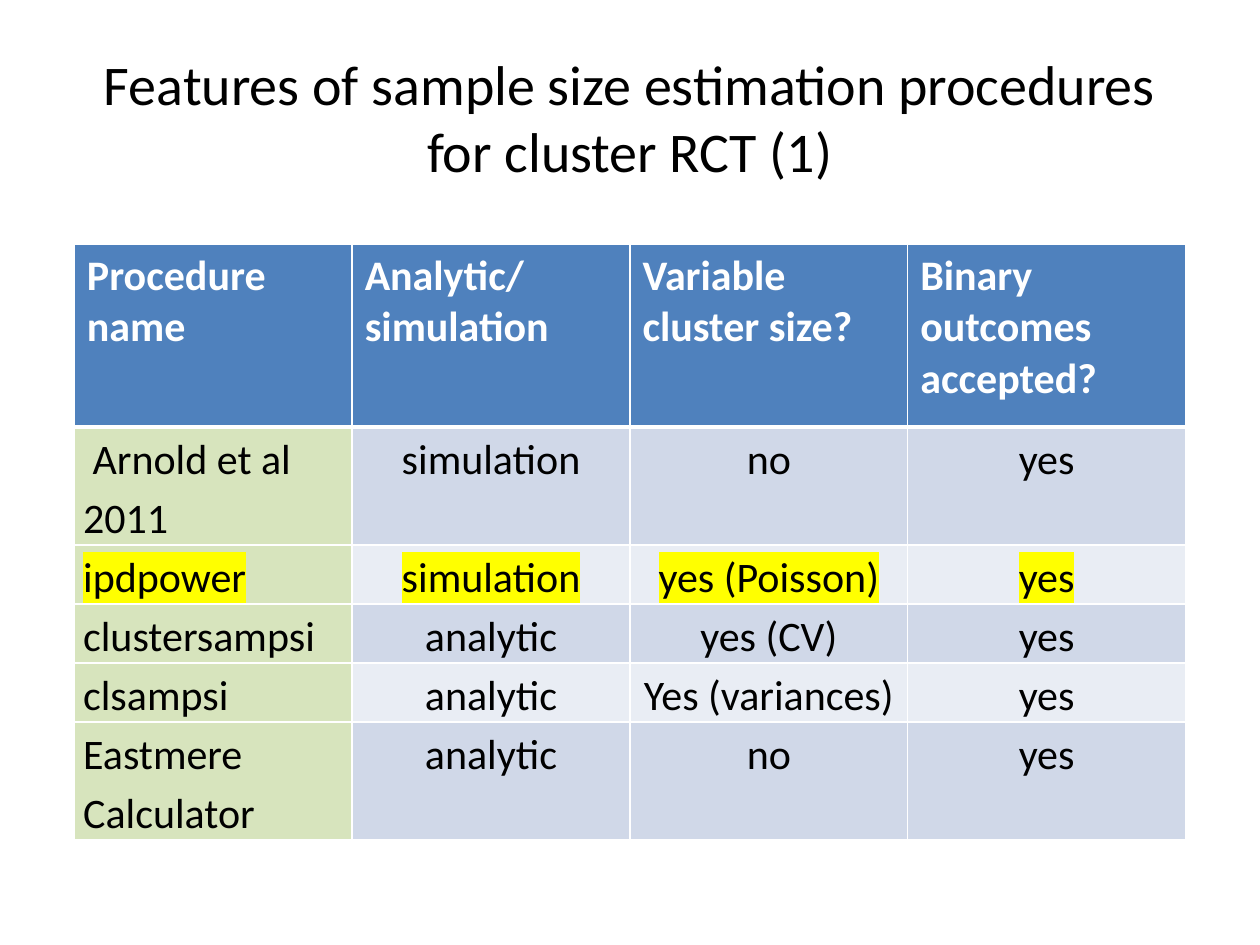
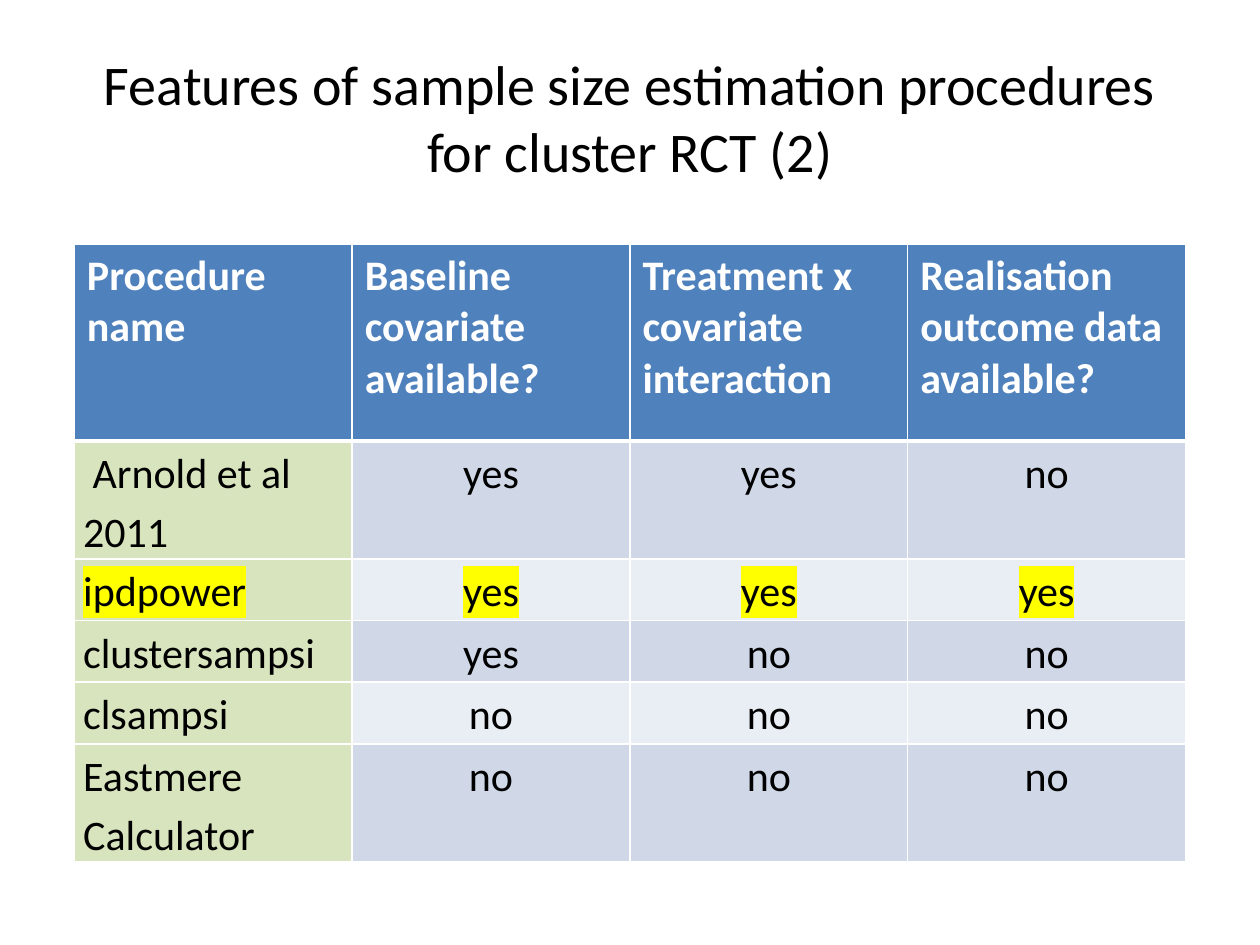
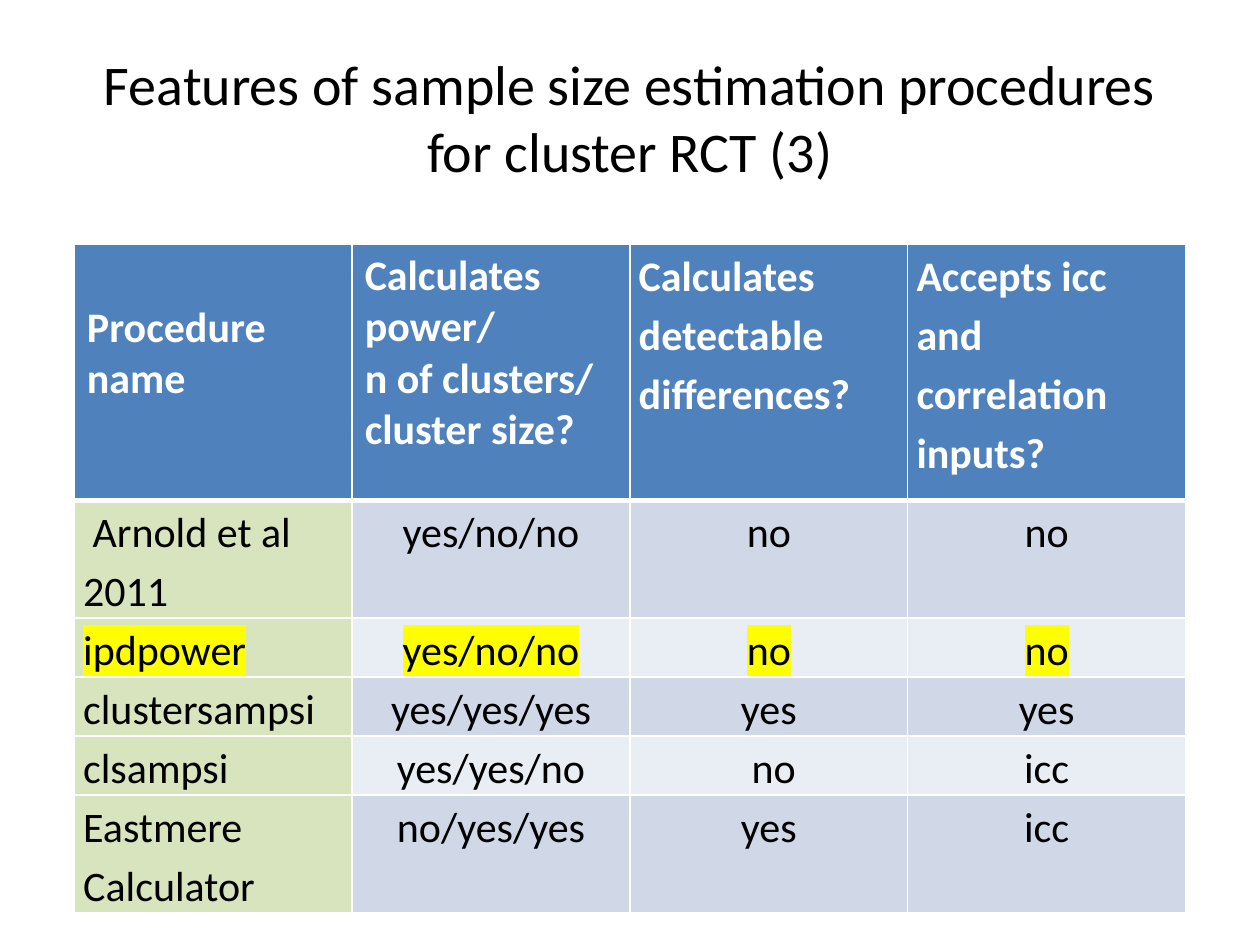
from dataclasses import dataclass

from lxml.etree import SubElement
from pptx import Presentation
from pptx.dml.color import RGBColor as Rgb
from pptx.enum.text import MSO_ANCHOR as Anchor, PP_ALIGN as Align
from pptx.oxml import parse_xml
from pptx.oxml.ns import nsdecls, qn
from pptx.util import Inches, Pt


@dataclass(frozen=True)
class Theme:
    font: str = "Calibri"
    title_size: int = 32
    table_size: int = 24
    text: str = "000000"
    header_text: str = "FFFFFF"
    header_fill: str = "4F81BD"
    name_fill: str = "D7E4BD"
    bands: tuple = ("D0D8E8", "E9EDF4")
    highlight: str = "FFFF00"
    border: str = "FFFFFF"
    thin: int = 1
    thick: int = 3


THEME = Theme()
TITLE = "Features of sample size estimation procedures for cluster RCT ({})"
PROCEDURES = [" Arnold et al 2011", "ipdpower", "clustersampsi", "clsampsi",
              "Eastmere Calculator"]
HIGHLIGHTED = "ipdpower"
COLUMN_WIDTH = 2.205
NORMAL_INSETS = (0.1, 0.05)
TIGHT_INSETS = (0.07, 0)
BODY_SPACING = 1.15
HEADER_LINE = 0.41


@dataclass(frozen=True)
class Comparison:
    """Feature questions, with one row of answers per procedure."""
    questions: tuple
    answers: tuple
    header_height: float
    row_height: float
    last_height: float
    tight_headers: tuple = ()
    name_drop: float = 0


COMPARISONS = [
    Comparison(
        ("Analytic/\nsimulation", "Variable cluster size?", "Binary outcomes accepted?"),
        (("simulation", "no", "yes"),
         ("simulation", "yes (Poisson)", "yes"),
         ("analytic", "yes (CV)", "yes"),
         ("analytic", "Yes (variances)", "yes"),
         ("analytic", "no", "yes")),
        header_height=1.45, row_height=0.45, last_height=0.83),
    Comparison(
        ("Baseline covariate available?", "Treatment x covariate interaction",
         "Realisation outcome data available?"),
        (("yes", "yes", "no"),
         ("yes", "yes", "yes"),
         ("yes", "no", "no"),
         ("no", "no", "no"),
         ("no", "no", "no")),
        header_height=1.56, row_height=0.49, last_height=0.9),
    Comparison(
        ("Calculates power/\nn of clusters/\ncluster size?",
         "Calculates detectable differences?", "Accepts icc and correlation inputs?"),
        (("yes/no/no", "no", "no"),
         ("yes/no/no", "no", "no"),
         ("yes/yes/yes", "yes", "yes"),
         ("yes/yes/no", " no", "icc"),
         ("no/yes/yes", "yes", "icc")),
        header_height=2.03, row_height=0.45, last_height=0.82,
        tight_headers=(2, 3), name_drop=HEADER_LINE),
]


def write_text(frame, text, size=THEME.table_size, color=THEME.text, bold=False,
               align=Align.LEFT, spacing=None, highlight=None):
    """Fill a text frame, one paragraph for each line of text."""
    for index, line in enumerate(text.split("\n")):
        paragraph = frame.add_paragraph() if index else frame.paragraphs[0]
        paragraph.alignment = align
        if spacing:
            paragraph.line_spacing = spacing
        run = paragraph.add_run()
        run.text = line
        font = run.font
        font.size, font.bold, font.name = Pt(size), bold, THEME.font
        font.color.rgb = Rgb.from_string(color)
        if highlight:
            mark = parse_xml(f'<a:highlight {nsdecls("a")}>'
                             f'<a:srgbClr val="{highlight}"/></a:highlight>')
            run._r.rPr.find(qn("a:solidFill")).addnext(mark)


def set_borders(cell, top, bottom):
    """Draw the four cell borders; they must precede the fill in the XML."""
    widths = {"a:lnL": THEME.thin, "a:lnR": THEME.thin, "a:lnT": top, "a:lnB": bottom}
    properties = cell._tc.get_or_add_tcPr()
    for position, (side, width) in enumerate(widths.items()):
        border = SubElement(properties, qn(side), w=str(Pt(width)))
        fill = SubElement(border, qn("a:solidFill"))
        SubElement(fill, qn("a:srgbClr"), val=THEME.border)
        properties.insert(position, border)


def format_cell(cell, fill, insets, top=THEME.thin, bottom=THEME.thin, drop=0):
    cell.fill.solid()
    cell.fill.fore_color.rgb = Rgb.from_string(fill)
    side, edge = insets
    cell.margin_left = cell.margin_right = Inches(side)
    cell.margin_top, cell.margin_bottom = Inches(edge + drop), Inches(edge)
    set_borders(cell, top, bottom)


def add_title(slide, text):
    title = slide.shapes.title
    title.left, title.top = Inches(0.5), Inches(0.3)
    title.width, title.height = Inches(9), Inches(1.25)
    title.text_frame.vertical_anchor = Anchor.MIDDLE
    write_text(title.text_frame, text, size=THEME.title_size, align=Align.CENTER)


def fill_header(table, comparison):
    for column, label in enumerate(("Procedure name", *comparison.questions)):
        tight = column in comparison.tight_headers
        cell = table.cell(0, column)
        format_cell(cell, THEME.header_fill, TIGHT_INSETS if tight else NORMAL_INSETS,
                    bottom=THEME.thick, drop=0 if column else comparison.name_drop)
        write_text(cell.text_frame, label, color=THEME.header_text, bold=True,
                   spacing=BODY_SPACING if tight else None)


def fill_procedure(table, row, name, answers):
    band = THEME.bands[(row - 1) % 2]
    for column, label in enumerate((name, *answers)):
        cell = table.cell(row, column)
        format_cell(cell, band if column else THEME.name_fill, TIGHT_INSETS,
                    top=THEME.thick if row == 1 else THEME.thin)
        write_text(cell.text_frame, label, spacing=BODY_SPACING,
                   align=Align.CENTER if column else Align.LEFT,
                   highlight=THEME.highlight if name == HIGHLIGHTED else None)


def add_comparison(slide, comparison):
    heights = [comparison.header_height,
               *[comparison.row_height] * (len(PROCEDURES) - 1),
               comparison.last_height]
    columns = len(comparison.questions) + 1
    table = slide.shapes.add_table(
        len(heights), columns, Inches(0.59), Inches(1.94),
        Inches(columns * COLUMN_WIDTH), Inches(sum(heights))).table
    for column in table.columns:
        column.width = Inches(COLUMN_WIDTH)
    for row, height in zip(table.rows, heights):
        row.height = Inches(height)
    fill_header(table, comparison)
    for row, (name, answers) in enumerate(zip(PROCEDURES, comparison.answers), 1):
        fill_procedure(table, row, name, answers)


def main():
    deck = Presentation()
    deck.slide_width, deck.slide_height = Inches(10), Inches(7.5)
    title_only = deck.slide_layouts[5]
    for number, comparison in enumerate(COMPARISONS, 1):
        slide = deck.slides.add_slide(title_only)
        add_title(slide, TITLE.format(number))
        add_comparison(slide, comparison)
    deck.save("out.pptx")


if __name__ == "__main__":
    main()
